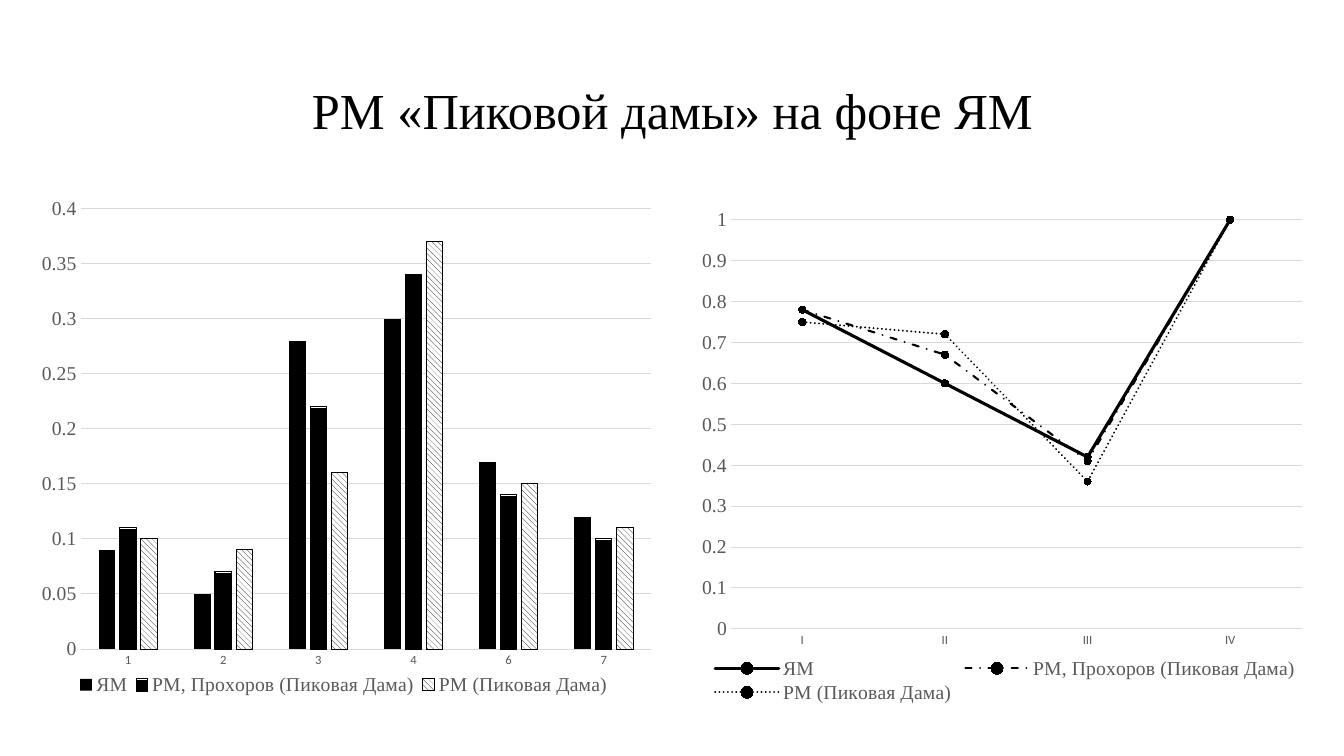
from dataclasses import dataclass
from typing import Optional

import pptx
import pptx.chart.chart
import pptx.chart.data
import pptx.dml.color
import pptx.dml.line
import pptx.enum.chart
import pptx.enum.dml
import pptx.enum.text
import pptx.oxml
import pptx.oxml.ns
import pptx.slide
import pptx.text.text
import pptx.util
from pptx.util import Inches

BLACK = pptx.dml.color.RGBColor(0x00, 0x00, 0x00)
WHITE = pptx.dml.color.RGBColor(0xFF, 0xFF, 0xFF)
GREY = pptx.dml.color.RGBColor(0x59, 0x59, 0x59)
PALE_GREY = pptx.dml.color.RGBColor(0xD9, 0xD9, 0xD9)
SERIF = "Times New Roman"
SANS = "Calibri"
PATTERN = pptx.enum.dml.MSO_PATTERN
DASH = pptx.enum.dml.MSO_LINE
CHART_TYPE = pptx.enum.chart.XL_CHART_TYPE


@dataclass(frozen=True)
class Meter:
    name: str
    stress: tuple[float, ...]
    feet: tuple[float, ...]
    pattern: Optional[PATTERN]
    width: float
    dash: Optional[DASH]


@dataclass(frozen=True)
class Area:
    left: float
    top: float
    width: float
    height: float


@dataclass(frozen=True)
class Panel:
    frame: Area
    plot: Area
    legend: Area
    kind: CHART_TYPE
    categories: tuple[str, ...]
    maximum: float
    step: float


METERS = (
    Meter("ЯМ", (0.09, 0.05, 0.28, 0.3, 0.17, 0.12), (0.78, 0.6, 0.42, 1), None, 2.25, None),
    Meter("РМ, Прохоров (Пиковая Дама)", (0.11, 0.07, 0.22, 0.34, 0.14, 0.1),
          (0.78, 0.67, 0.41, 1), PATTERN.DARK_HORIZONTAL, 1.5, DASH.DASH_DOT),
    Meter("РМ (Пиковая Дама)", (0.1, 0.09, 0.16, 0.37, 0.15, 0.11),
          (0.75, 0.72, 0.36, 1), PATTERN.WIDE_DOWNWARD_DIAGONAL, 1.5, DASH.ROUND_DOT),
)
COLUMNS = Panel(Area(0.28, 1.85, 6.31, 5.25), Area(0.52, 0.22, 5.66, 4.37),
                Area(0.43, 4.81, 5.4, 0.27), CHART_TYPE.COLUMN_CLUSTERED,
                ("1", "2", "3", "4", "6", "7"), 0.4, 0.05)
LINES = Panel(Area(6.75, 2, 6.31, 5.1), Area(0.5, 0.18, 5.66, 4.06),
              Area(0.27, 4.5, 5.9, 0.5), CHART_TYPE.LINE_MARKERS,
              ("I", "II", "III", "IV"), 1, 0.1)


def set_font(font: pptx.text.text.Font, name: str, size: float,
             color: pptx.dml.color.RGBColor) -> None:
    font.name = name
    font.size = pptx.util.Pt(size)
    font.color.rgb = color


def set_line(line: pptx.dml.line.LineFormat, color: pptx.dml.color.RGBColor,
             width: float) -> None:
    line.color.rgb = color
    line.width = pptx.util.Pt(width)


def add_title(page: pptx.slide.Slide, text: str) -> None:
    box = page.shapes.add_textbox(Inches(0.92), Inches(0.4), Inches(11.5), Inches(1.45))
    frame = box.text_frame
    frame.word_wrap = True
    frame.vertical_anchor = pptx.enum.text.MSO_ANCHOR.MIDDLE
    frame.text = text
    para = frame.paragraphs[0]
    para.alignment = pptx.enum.text.PP_ALIGN.CENTER
    para.line_spacing = 0.9
    set_font(para.runs[0].font, SERIF, 36, BLACK)


def place_part(chart: pptx.chart.chart.Chart, tag: str, index: int,
               target: str, frame: Area, area: Area) -> None:
    qn = pptx.oxml.ns.qn
    part = chart.element.find(f".//{qn(tag)}")
    for layout in part.findall(qn("c:layout")):
        part.remove(layout)
    modes = "".join(f'<c:{side}Mode val="edge"/>' for side in "xy")
    shares = {"x": area.left / frame.width, "y": area.top / frame.height,
              "w": area.width / frame.width, "h": area.height / frame.height}
    sizes = "".join(f'<c:{side} val="{share:.4f}"/>' for side, share in shares.items())
    part.insert(index, pptx.oxml.parse_xml(
        f'<c:layout {pptx.oxml.ns.nsdecls("c")}><c:manualLayout>'
        f'{target}{modes}{sizes}</c:manualLayout></c:layout>'))


def add_panel(page: pptx.slide.Slide, panel: Panel,
              rows: list[tuple[float, ...]]) -> pptx.chart.chart.Chart:
    data = pptx.chart.data.CategoryChartData()
    data.categories = panel.categories
    for meter, values in zip(METERS, rows):
        data.add_series(meter.name, values)
    frame = panel.frame
    chart = page.shapes.add_chart(
        panel.kind, Inches(frame.left), Inches(frame.top),
        Inches(frame.width), Inches(frame.height), data).chart
    set_font(chart.font, SANS, 10, BLACK)
    chart.has_title = False
    chart.has_legend = True
    chart.legend.position = pptx.enum.chart.XL_LEGEND_POSITION.BOTTOM
    chart.legend.include_in_layout = False
    set_font(chart.legend.font, SERIF, 14, GREY)
    chart.plots[0].vary_by_categories = False

    for axis, font, size in ((chart.category_axis, SANS, 9), (chart.value_axis, SERIF, 14)):
        axis.major_tick_mark = pptx.enum.chart.XL_TICK_MARK.NONE
        axis.minor_tick_mark = pptx.enum.chart.XL_TICK_MARK.NONE
        set_font(axis.tick_labels.font, font, size, GREY)
    set_line(chart.category_axis.format.line, PALE_GREY, 0.75)
    scale = chart.value_axis
    scale.minimum_scale = 0
    scale.maximum_scale = panel.maximum
    scale.major_unit = panel.step
    scale.format.line.fill.background()
    scale.has_major_gridlines = True
    set_line(scale.major_gridlines.format.line, PALE_GREY, 0.75)
    place_part(chart, "c:plotArea", 0, '<c:layoutTarget val="inner"/>', frame, panel.plot)
    place_part(chart, "c:legend", 1, "", frame, panel.legend)
    return chart


def style_columns(chart: pptx.chart.chart.Chart) -> None:
    plot = chart.plots[0]
    plot.gap_width = 219
    plot.overlap = -27
    for meter, series in zip(METERS, plot.series):
        fill = series.format.fill
        if meter.pattern is None:
            fill.solid()
            fill.fore_color.rgb = BLACK
            continue
        fill.patterned()
        fill.pattern = meter.pattern
        fill.fore_color.rgb = BLACK
        fill.back_color.rgb = WHITE
        set_line(series.format.line, BLACK, 0.75)


def style_lines(chart: pptx.chart.chart.Chart) -> None:
    qn = pptx.oxml.ns.qn
    for meter, series in zip(METERS, chart.plots[0].series):
        series.smooth = False
        set_line(series.format.line, BLACK, meter.width)
        if meter.dash is not None:
            series.format.line.dash_style = meter.dash
        marker = series.marker
        marker.style = pptx.enum.chart.XL_MARKER_STYLE.CIRCLE
        marker.size = 5
        marker.format.fill.solid()
        marker.format.fill.fore_color.rgb = BLACK
        set_line(marker.format.line, BLACK, 0.75)
    for outline in chart.element.findall(f".//{qn('c:ser')}/{qn('c:spPr')}/{qn('a:ln')}"):
        outline.set("cap", "rnd")


def main() -> None:
    deck = pptx.Presentation()
    deck.slide_width = Inches(13.33)
    deck.slide_height = Inches(7.5)
    page = deck.slides.add_slide(deck.slide_layouts[6])
    add_title(page, "РМ «Пиковой дамы» на фоне ЯМ")
    style_columns(add_panel(page, COLUMNS, [meter.stress for meter in METERS]))
    style_lines(add_panel(page, LINES, [meter.feet for meter in METERS]))
    deck.save("out.pptx")


if __name__ == "__main__":
    main()
